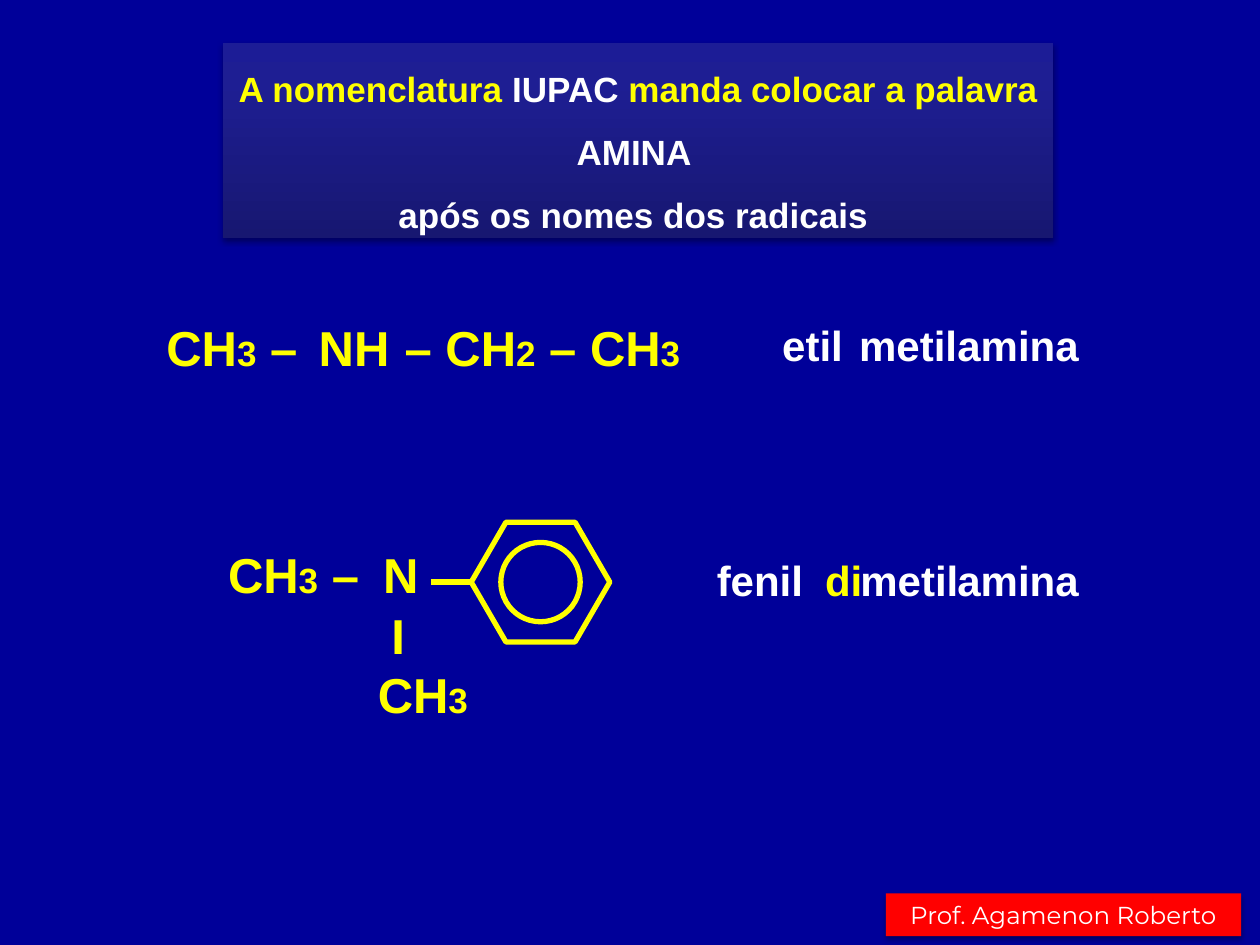
from copy import deepcopy
from lxml import etree
from pptx import Presentation
from pptx.dml.color import RGBColor
from pptx.enum.shapes import MSO_CONNECTOR, MSO_SHAPE
from pptx.enum.text import MSO_ANCHOR, PP_ALIGN
from pptx.oxml.ns import qn
from pptx.util import Inches, Pt

NAVY = RGBColor(0, 0, 0x99)
YELLOW = RGBColor(0xFF, 0xFF, 0)
WHITE = RGBColor(0xFF, 0xFF, 0xFF)
RED = RGBColor(0xFF, 0, 0)
SHADE = [(0, RGBColor(0x17, 0x17, 0x71)), (0.8, RGBColor(0x1E, 0x1E, 0x93)),
         (1, RGBColor(0x1C, 0x1C, 0x96))]
LEFT, CENTER = PP_ALIGN.LEFT, PP_ALIGN.CENTER
TOP, MIDDLE = MSO_ANCHOR.TOP, MSO_ANCHOR.MIDDLE
RECT, HEXAGON, OVAL = MSO_SHAPE.RECTANGLE, MSO_SHAPE.HEXAGON, MSO_SHAPE.OVAL

BIG = {"size": Pt(28), "name": "Arial", "bold": True, "color": YELLOW}
SUB = {**BIG, "size": Pt(20)}
NAME = {**BIG, "size": Pt(24), "color": WHITE}
PREFIX = {**NAME, "color": YELLOW}
HEAD = {**SUB, "color": WHITE}
CREDIT = {"size": Pt(14), "name": "Montserrat", "bold": False, "color": WHITE}

TITLE = [
    [("A nomenclatura ", SUB), ("IUPAC", HEAD), (" manda colocar a palavra", SUB)],
    [("AMINA ", HEAD)],
    [("após os nomes dos radicais ", HEAD)],
]
METHYL = [("CH", BIG), ("3", SUB)]
BOND = [(" –", BIG)]
ETHYL = [("– CH", BIG), ("2", SUB), (" – CH", BIG), ("3", SUB)]

# left, top, width, height, paragraphs
FORMULAS = [
    (1.22, 2.47, 1.24, 0.57, [METHYL + BOND], CENTER),
    (2.43, 2.47, 0.76, 0.57, [[("NH", BIG)]], CENTER),
    (3.11, 2.47, 2.39, 0.57, [ETHYL], CENTER),
    (1.71, 4.27, 1.24, 0.57, [METHYL + BOND], CENTER),
    (2.94, 4.27, 0.48, 0.57, [[("N", BIG)]], CENTER),
    (2.9, 4.76, 0.92, 1.03, [[(" I", BIG)], METHYL], LEFT),
]
# top, then (text, left, width, format) for each part of the name
NAMES = [
    (2.49, [("etil", 6.11, 0.69, NAME), ("metil", 6.72, 0.99, NAME),
            ("amina", 7.5, 1.18, NAME)]),
    (4.35, [("fenil", 5.59, 0.89, NAME), ("metil", 6.73, 0.99, NAME),
            ("amina", 7.5, 1.18, NAME), ("di", 6.45, 0.5, PREFIX)]),
]
RING = (4.29, 4.62)  # centre of the benzene ring

deck = Presentation()
deck.slide_width, deck.slide_height = Inches(10), Inches(7.5)
slide = deck.slides.add_slide(deck.slide_layouts[6])
slide.background.fill.solid()
slide.background.fill.fore_color.rgb = NAVY
shapes = slide.shapes


def write(shape, paras, align=CENTER, anchor=TOP, spacing=None):
    frame = shape.text_frame
    frame.word_wrap = False
    frame.vertical_anchor = anchor
    for i, runs in enumerate(paras):
        para = frame.add_paragraph() if i else frame.paragraphs[0]
        para.alignment = align
        if spacing:
            para.line_spacing = spacing
        for text, style in runs:
            run = para.add_run()
            run.text = text
            for key, value in style.items():
                if key == "color":
                    run.font.color.rgb = value
                else:
                    setattr(run.font, key, value)


def label(left, top, width, height, paras, align=LEFT):
    box = shapes.add_textbox(*map(Inches, (left, top, width, height)))
    write(box, paras, align)


def panel(kind, left, top, width, height, color):
    shape = shapes.add_shape(kind, *map(Inches, (left, top, width, height)))
    shape.shadow.inherit = False
    shape.fill.solid()
    shape.fill.fore_color.rgb = color
    shape.line.fill.background()
    return shape


def outline(shape):
    shape.line.color.rgb = YELLOW
    shape.line.width = Pt(3)


def cast(shape):
    """Give the shape a soft shadow straight below it."""
    effects = shape._element.spPr.find(qn("a:effectLst"))
    shadow = etree.SubElement(effects, qn("a:outerShdw"), blurRad=str(Pt(3.1)),
                              dist=str(Pt(1.8)), dir="5400000", rotWithShape="0")
    color = etree.SubElement(shadow, qn("a:srgbClr"), val="000000")
    etree.SubElement(color, qn("a:alpha"), val="35000")


def shade(shape):
    fill = shape.fill
    fill.gradient()
    fill.gradient_angle = 90
    stops = shape._element.spPr.find(qn("a:gradFill")).find(qn("a:gsLst"))
    stops.append(deepcopy(stops[0]))
    for stop, (place, color) in zip(fill.gradient_stops, SHADE):
        stop.position = place
        stop.color.rgb = color


title = panel(RECT, 1.77, 0.34, 6.59, 1.55, NAVY)
shade(title)
cast(title)
write(title, TITLE, anchor=MIDDLE, spacing=1.5)

for item in FORMULAS:
    label(*item)

x, y = RING
bond = shapes.add_connector(MSO_CONNECTOR.STRAIGHT, Inches(3.42), Inches(y),
                            Inches(3.74), Inches(y))
outline(bond)
etree.SubElement(bond._element.spPr, qn("a:effectLst"))
for kind, width, height in [(HEXAGON, 1.1, 0.95), (OVAL, 0.63, 0.63)]:
    ring = panel(kind, x - width / 2, y - height / 2, width, height, NAVY)
    outline(ring)
    if kind == HEXAGON:
        ring.adjustments[0] = 0.29

for top, parts in NAMES:
    for text, left, width, style in parts:
        label(left, top, width, 0.51, [[(text, style)]])

credit = panel(RECT, 7.03, 7.09, 2.82, 0.34, RED)
cast(credit)
write(credit, [[("Prof. Agamenon Roberto", CREDIT)]])

deck.save("out.pptx")
